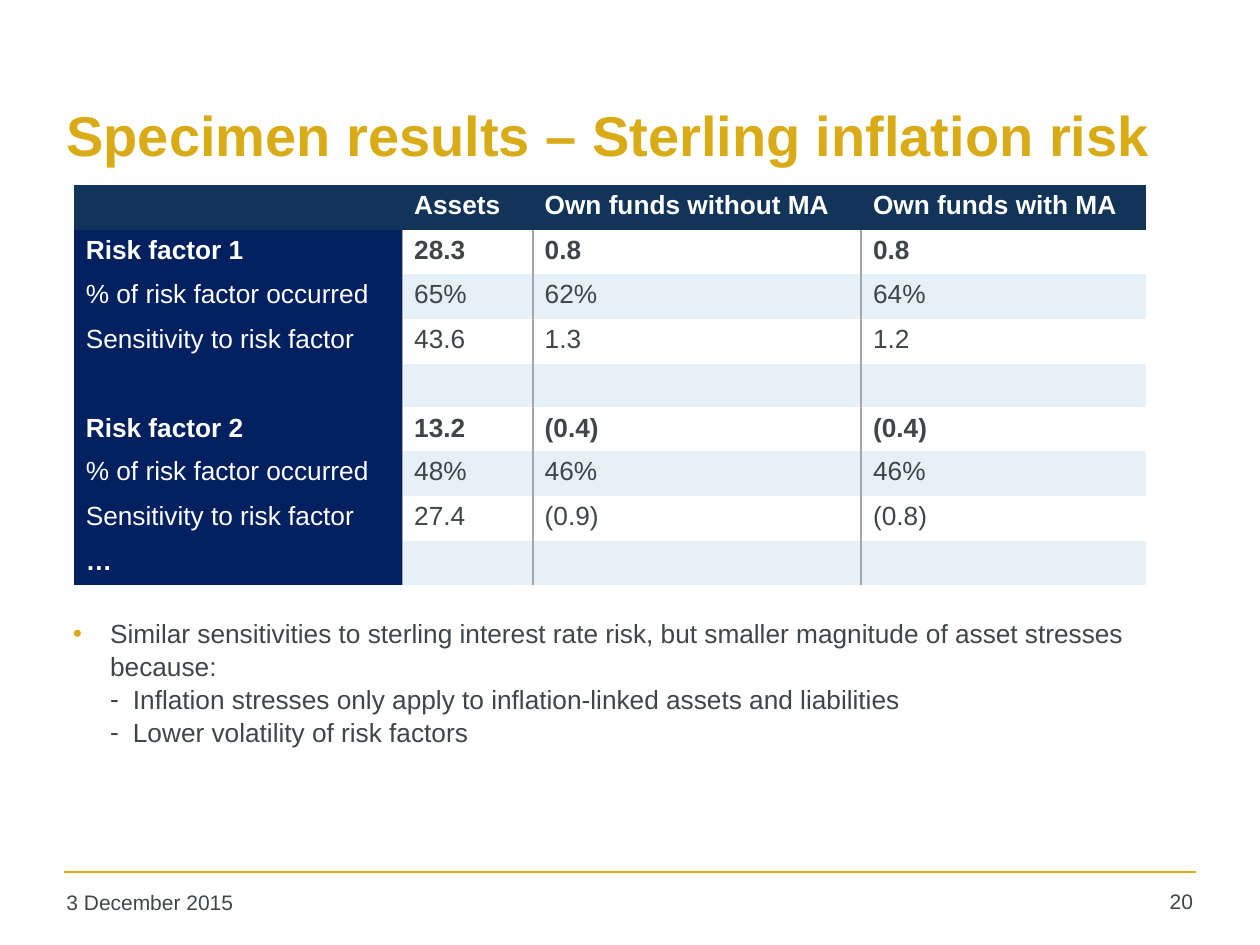
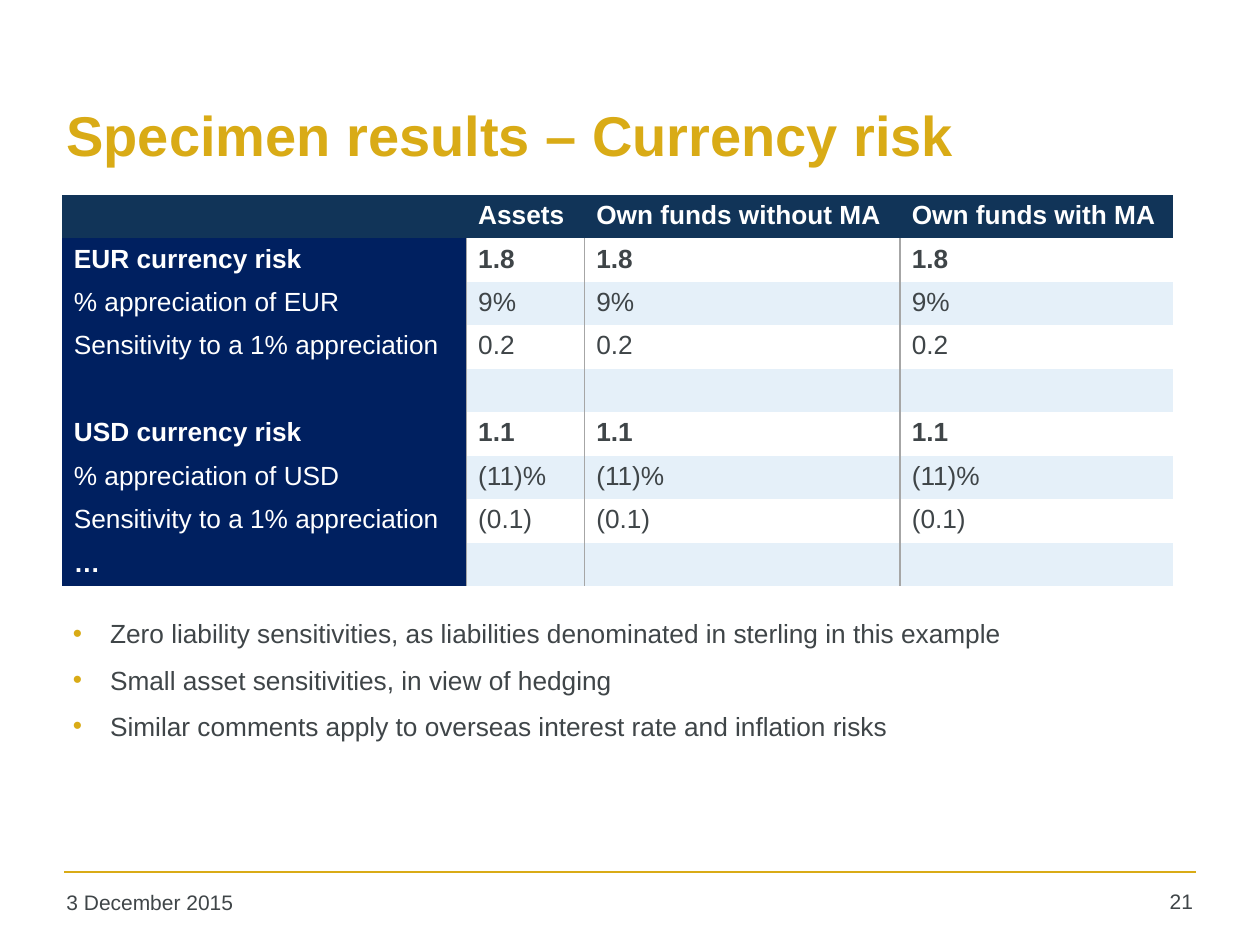
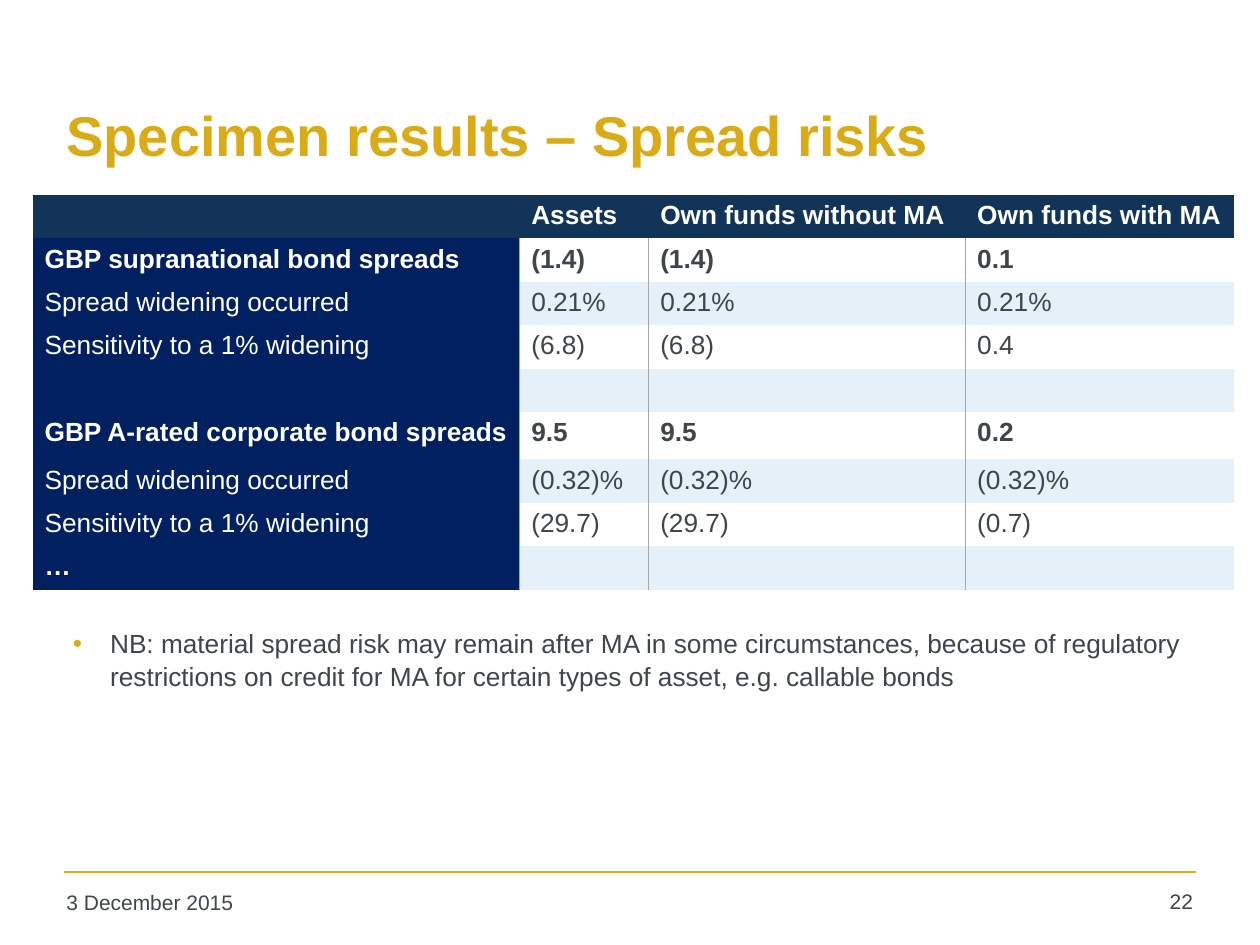
import pptx
import pptx.dml.color
import pptx.enum.shapes
import pptx.enum.text
import pptx.oxml.ns
import pptx.util
from lxml import etree

Cm = pptx.util.Cm
Pt = pptx.util.Pt

HUES = {
    "gold": "D9AB16",
    "text": "3F4548",
    "head": "113458",
    "side": "002060",
    "band": "E5F0F9",
    "white": "FFFFFF",
    "rule": "A6A6A6",
}
FACE = "Arial"
SIZE = 15
BOLD = {0, 1, 5, 8}
HEAD = ["", "Assets", "Own funds without MA", "Own funds with MA"]
GAP = ["", "", "", ""]
MORE = ["…", "", "", ""]
LOW, MID, HIGH = 0.85, 0.91, 0.95

SLIDES = [
    {
        "title": "Specimen results – Sterling inflation risk",
        "left": 1.49,
        "top": 3.73,
        "cols": [6.62, 2.63, 6.62, 5.74],
        "rows": [MID, LOW, MID, MID, LOW, LOW, MID, MID, LOW],
        "cells": [
            ["Risk factor 1", "28.3", "0.8", "0.8"],
            ["% of risk factor occurred", "65%", "62%", "64%"],
            ["Sensitivity to risk factor", "43.6", "1.3", "1.2"],
            GAP,
            ["Risk factor 2", "13.2", "(0.4)", "(0.4)"],
            ["% of risk factor occurred", "48%", "46%", "46%"],
            ["Sensitivity to risk factor", "27.4", "(0.9)", "(0.8)"],
            MORE,
        ],
        "note": 12.32,
        "points": [
            ("•", "Similar sensitivities to sterling interest rate risk, but smaller "
                  "magnitude of asset stresses because:"),
            ("-", "Inflation stresses only apply to inflation-linked assets and liabilities"),
            ("-", "Lower volatility of risk factors"),
        ],
    },
    {
        "title": "Specimen results – Currency risk",
        "left": 1.25,
        "top": 3.93,
        "cols": [8.15, 2.38, 6.36, 5.51],
        "rows": [LOW] * 9,
        "cells": [
            ["EUR currency risk", "1.8", "1.8", "1.8"],
            ["% appreciation of EUR", "9%", "9%", "9%"],
            ["Sensitivity to a 1% appreciation", "0.2", "0.2", "0.2"],
            GAP,
            ["USD currency risk", "1.1", "1.1", "1.1"],
            ["% appreciation of USD", "(11)%", "(11)%", "(11)%"],
            ["Sensitivity to a 1% appreciation", "(0.1)", "(0.1)", "(0.1)"],
            MORE,
        ],
        "note": 12.32,
        "points": [
            ("•", "Zero liability sensitivities, as liabilities denominated in sterling "
                  "in this example"),
            ("•", "Small asset sensitivities, in view of hedging"),
            ("•", "Similar comments apply to overseas interest rate and inflation risks"),
        ],
    },
    {
        "title": "Specimen results – Spread risks",
        "left": 0.66,
        "top": 3.93,
        "cols": [9.81, 2.6, 6.39, 5.42],
        "rows": [LOW] * 5 + [HIGH] + [LOW] * 3,
        "cells": [
            ["GBP supranational bond spreads", "(1.4)", "(1.4)", "0.1"],
            ["Spread widening occurred", "0.21%", "0.21%", "0.21%"],
            ["Sensitivity to a 1% widening", "(6.8)", "(6.8)", "0.4"],
            GAP,
            ["GBP A-rated corporate bond spreads", "9.5", "9.5", "0.2"],
            ["Spread widening occurred", "(0.32)%", "(0.32)%", "(0.32)%"],
            ["Sensitivity to a 1% widening", "(29.7)", "(29.7)", "(0.7)"],
            MORE,
        ],
        "note": 12.52,
        "points": [
            ("•", "NB: material spread risk may remain after MA in some circumstances, "
                  "because of regulatory restrictions on credit for MA for certain types "
                  "of asset, e.g. callable bonds"),
        ],
    },
]


def tint(name):
    return pptx.dml.color.RGBColor.from_string(HUES[name])


def add_tag(node, tag, **attrs):
    return etree.SubElement(node, pptx.oxml.ns.qn(tag), attrs)


def set_font(para, size, hue, bold=False):
    font = para.font
    font.name = FACE
    font.size = Pt(size)
    font.bold = bold
    font.color.rgb = tint(hue)


def add_box(slide, left, top, width, height):
    frame = slide.shapes.add_textbox(Cm(left), Cm(top), Cm(width), Cm(height)).text_frame
    frame.word_wrap = True
    return frame


def add_label(slide, spot, text, size, hue, bold=False):
    frame = add_box(slide, *spot)
    para = frame.paragraphs[0]
    para.text = text
    set_font(para, size, hue, bold)
    return frame


def add_title(slide, text):
    frame = add_label(slide, (1.09, 1.12, 23.04, 3.18), text, 32, "gold", True)
    frame.vertical_anchor = pptx.enum.text.MSO_ANCHOR.MIDDLE


def add_footer(slide, number):
    kind = pptx.enum.shapes.MSO_CONNECTOR.STRAIGHT
    line = slide.shapes.add_connector(kind, Cm(1.3), Cm(17.58), Cm(24.1), Cm(17.58))
    line.line.color.rgb = tint("gold")
    line.line.width = Pt(1)
    add_tag(line._element.spPr, "a:effectLst")
    add_label(slide, (1.09, 17.81, 5.59, 0.91), "3 December 2015", 12, "text")
    page = add_label(slide, (22.5, 17.78, 1.8, 0.94), str(number), 12, "text")
    page.paragraphs[0].alignment = pptx.enum.text.PP_ALIGN.RIGHT


def set_edges(cell, ruled):
    props = cell._tc.get_or_add_tcPr()
    for side in "LRTB":
        edge = add_tag(props, f"a:ln{side}", w=str(Pt(1)))
        if side in ruled:
            fill = add_tag(edge, "a:solidFill")
            add_tag(fill, "a:srgbClr", val=HUES["rule"])
        else:
            add_tag(edge, "a:noFill")


def cell_fill(row, col):
    if row == 0:
        return "head"
    if col == 0:
        return "side"
    return "white" if row % 2 else "band"


def fill_cell(cell, text, row, col, last):
    ruled = ""
    if row > 0:
        ruled = ("L" if col > 0 else "") + ("R" if col < last else "")
    set_edges(cell, ruled)
    cell.fill.solid()
    cell.fill.fore_color.rgb = tint(cell_fill(row, col))
    cell.margin_left, cell.margin_right = Cm(0.24), Cm(0.2)
    cell.margin_top = cell.margin_bottom = Cm(0.12)
    para = cell.text_frame.paragraphs[0]
    para.text = text
    set_font(para, SIZE, "white" if row == 0 or col == 0 else "text", row in BOLD)
    if not text:
        add_tag(para._p, "a:endParaRPr", sz=str(SIZE * 100))


def add_grid(slide, data):
    cols, rows = data["cols"], data["rows"]
    frame = slide.shapes.add_table(
        len(rows), len(cols), Cm(data["left"]), Cm(data["top"]), Cm(sum(cols)), Cm(sum(rows)))
    table = frame.table
    for col, width in zip(table.columns, cols):
        col.width = Cm(width)
    for row, height in zip(table.rows, rows):
        row.height = Cm(height)
    for row, texts in enumerate([HEAD] + data["cells"]):
        for col, text in enumerate(texts):
            fill_cell(table.cell(row, col), text, row, col, len(cols) - 1)


def set_bullet(para, mark):
    main = mark == "•"
    left, hang = (0.75, 0.75) if main else (1.21, 0.46)
    props = para._p.get_or_add_pPr()
    props.set("marL", str(Cm(left)))
    props.set("indent", str(-Cm(hang)))
    hue = add_tag(props, "a:buClr")
    add_tag(hue, "a:srgbClr", val=HUES["gold" if main else "text"])
    add_tag(props, "a:buFont", typeface=FACE)
    add_tag(props, "a:buChar", char=mark)


def add_points(slide, top, points):
    frame = add_box(slide, 1.24, top, 23.04, 4.32)
    frame.margin_left = frame.margin_right = Cm(0.23)
    frame.margin_top = frame.margin_bottom = Cm(0.1)
    for rank, (mark, text) in enumerate(points):
        para = frame.add_paragraph() if rank else frame.paragraphs[0]
        para.text = text
        set_bullet(para, mark)
        para.line_spacing = 1.05
        if rank and mark == "•":
            para.space_before = Pt(7.5)
        set_font(para, SIZE, "text")


def main():
    deck = pptx.Presentation()
    deck.slide_width, deck.slide_height = Cm(25.4), Cm(19.05)
    for number, data in enumerate(SLIDES, 20):
        slide = deck.slides.add_slide(deck.slide_layouts[6])
        add_title(slide, data["title"])
        add_footer(slide, number)
        add_grid(slide, data)
        add_points(slide, data["note"], data["points"])
    deck.save("out.pptx")


if __name__ == "__main__":
    main()
